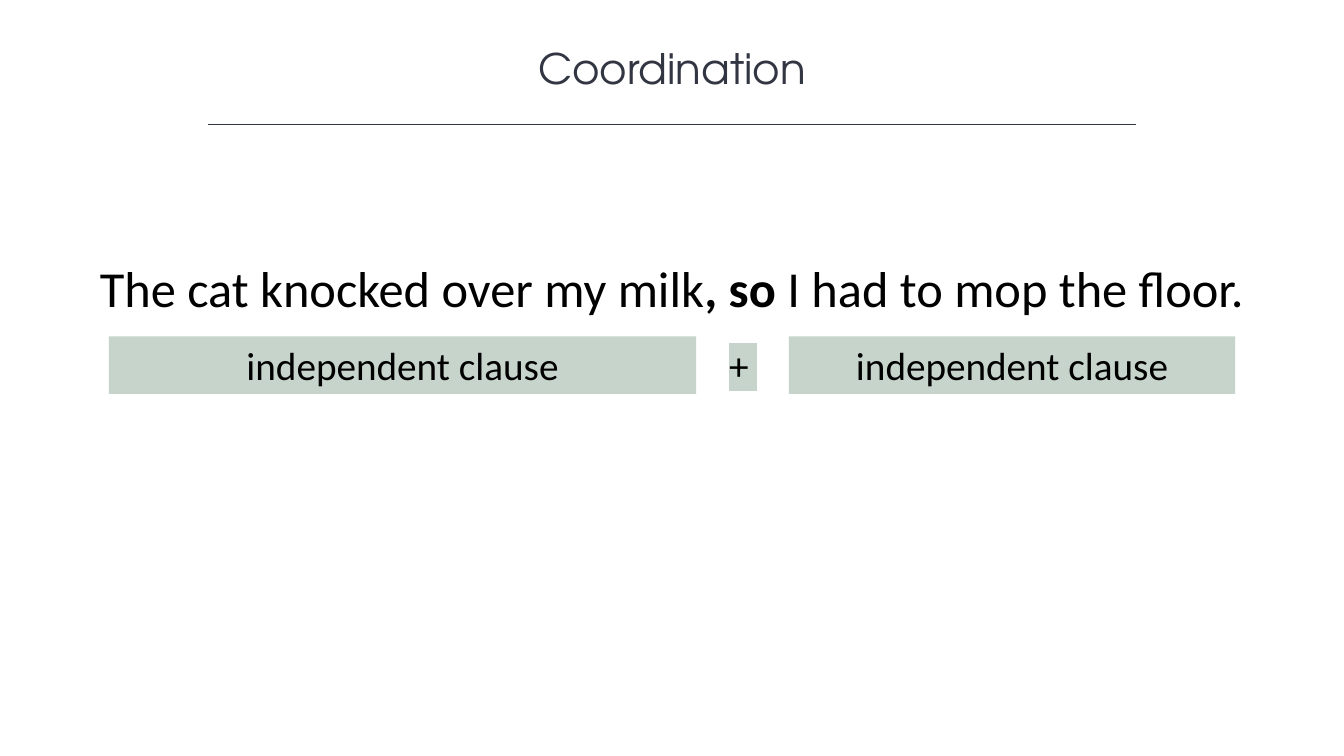
import lxml.etree
import pptx
import pptx.dml.color
import pptx.enum.shapes
import pptx.enum.text
import pptx.oxml
import pptx.oxml.ns
import pptx.util


def rgb(value):
    """Return the colour for a hex string."""
    return pptx.dml.color.RGBColor.from_string(value)


class Deck:
    """Hold the style and the current slide, measured in shares of its size."""

    INK, TEXT, SAGE = "323542", "000000", "C7D4CB"
    TITLE_FONT, BODY_FONT = "TeX Gyre Adventor", "Calibri"

    def __init__(self, prs):
        """Set the slide size and add a title-only slide."""
        self.prs = prs
        prs.slide_width = pptx.util.Inches(13.33)
        prs.slide_height = pptx.util.Inches(7.5)
        self.s = prs.slides.add_slide(prs.slide_layouts[5])

    def place(self, x, y, w, h):
        """Turn shares of the slide into lengths."""
        width, height = self.prs.slide_width, self.prs.slide_height
        return int(x * width), int(y * height), int(w * width), int(h * height)

    def caption(self, sp, runs, size, font=BODY_FONT, color=TEXT):
        """Fill a shape with one centred paragraph of (text, bold) runs."""
        tf = sp.text_frame
        tf.word_wrap = True
        tf.vertical_anchor = pptx.enum.text.MSO_ANCHOR.MIDDLE
        p = tf.paragraphs[0]
        p.alignment = pptx.enum.text.PP_ALIGN.CENTER
        p.font.size = pptx.util.Pt(size)
        p.font.name = font
        p.font.color.rgb = rgb(color)
        for text, bold in runs:
            r = p.add_run()
            r.text = text
            if bold:
                r.font.bold = True
        return p

    def title(self, text, box):
        """Move and format the title placeholder."""
        sp = self.s.shapes.title
        sp.left, sp.top, sp.width, sp.height = self.place(*box)
        self.caption(sp, [(text, False)], 30, self.TITLE_FONT, self.INK)

    def rule(self, x, y, w):
        """Draw a thin horizontal line."""
        left, top, width, _ = self.place(x, y, w, 0)
        line = self.s.shapes.add_connector(
            pptx.enum.shapes.MSO_CONNECTOR.STRAIGHT, left, top, left + width, top)
        line.line.color.rgb = rgb(self.INK)
        line.line.width = pptx.util.Pt(1)
        lxml.etree.SubElement(line._element.spPr, pptx.oxml.ns.qn("a:effectLst"))

    def text(self, runs, size, box):
        """Add a text box and return its paragraph."""
        return self.caption(self.s.shapes.add_textbox(*self.place(*box)), runs, size)

    def label(self, text, box):
        """Add a filled rectangle with a caption."""
        sp = self.s.shapes.add_shape(
            pptx.enum.shapes.MSO_SHAPE.RECTANGLE, *self.place(*box))
        sp.shadow.inherit = False
        sp.fill.solid()
        sp.fill.fore_color.rgb = rgb(self.SAGE)
        sp.line.fill.background()
        self.caption(sp, [(text, False)], 28)

    def marked(self, text, box):
        """Add a text box whose text is highlighted."""
        r = self.text([(text, False)], 28, box).runs[0]
        r.font.color.rgb = rgb(self.TEXT)
        props = r._r.get_or_add_rPr()
        mark = lxml.etree.SubElement(props, pptx.oxml.ns.qn("a:highlight"))
        lxml.etree.SubElement(mark, pptx.oxml.ns.qn("a:srgbClr"), val=self.SAGE)


def main():
    """Build the slide on coordination."""
    prs = pptx.Presentation()
    deck = Deck(prs)
    deck.title("Coordination", (0.125, 0.05, 0.75, 0.08))
    deck.rule(0.155, 0.165, 0.69)
    deck.text([("The cat knocked over my milk", False), (", so", True),
               (" I had to mop the floor.", False)], 36, (0.06, 0.333, 0.88, 0.095))
    row, height = 0.445, 0.076
    for x, w in ((0.081, 0.437), (0.587, 0.332)):
        deck.label("independent clause", (x, row, w, height))
    deck.marked("+ ", (0.525, row, 0.056, height))
    prs.save("out.pptx")


if __name__ == "__main__":
    main()
